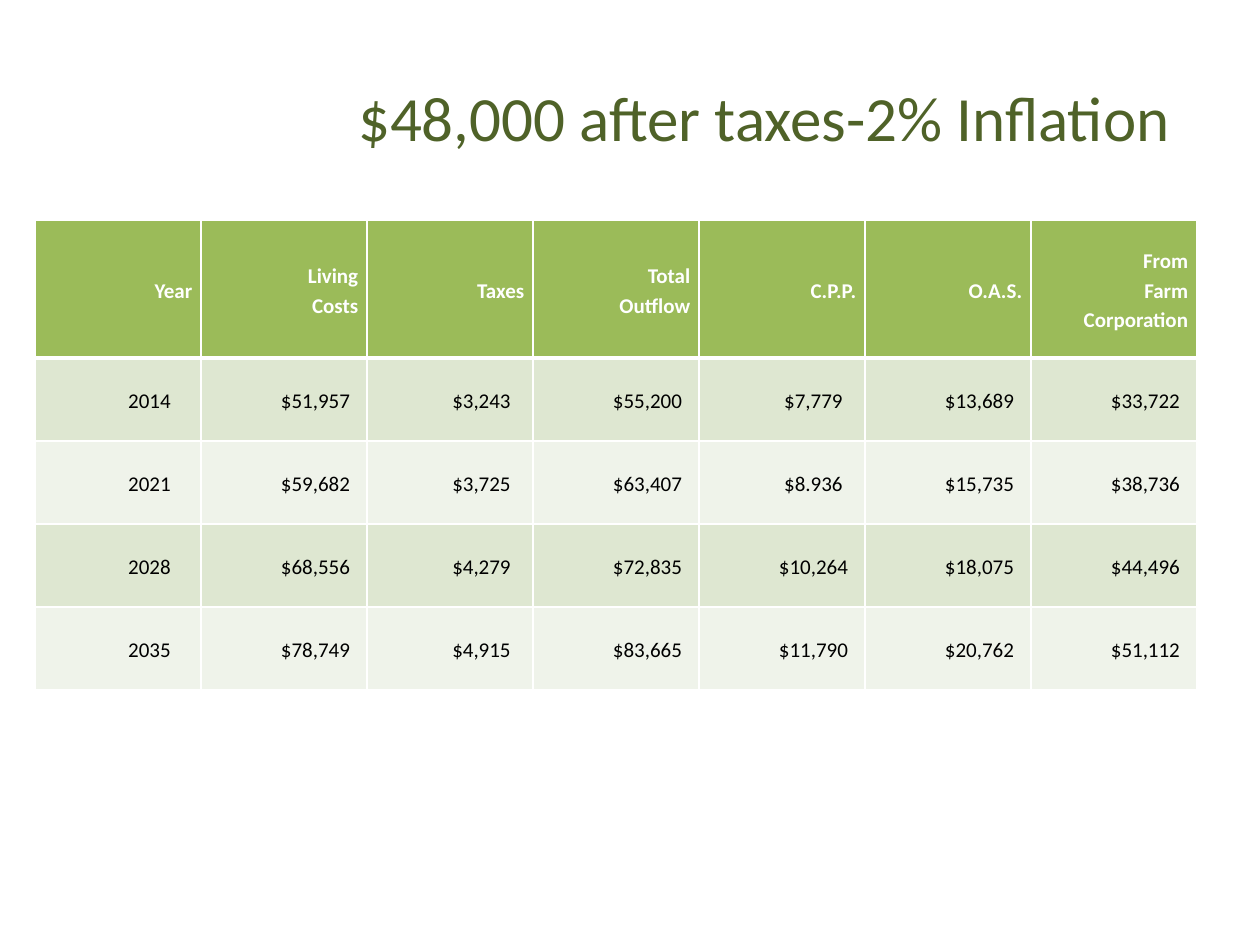
from dataclasses import dataclass

from lxml import etree
from pptx import Presentation
from pptx.dml.color import RGBColor
from pptx.enum.text import MSO_ANCHOR, MSO_AUTO_SIZE, PP_ALIGN
from pptx.oxml.ns import qn
from pptx.util import Pt

MIDDLE = MSO_ANCHOR.MIDDLE
NO_AUTOFIT = MSO_AUTO_SIZE.NONE
RIGHT, CENTER = PP_ALIGN.RIGHT, PP_ALIGN.CENTER
TITLE_ONLY = 5


@dataclass(frozen=True)
class Theme:
    font: str = "Calibri"
    title_size: float = 36
    table_size: float = 12
    title: str = "4F6228"
    header_fill: str = "9BBB59"
    header_text: str = "FFFFFF"
    body_text: str = "000000"
    bands: tuple = ("DEE7D1", "EFF3EA")
    rule: str = "FFFFFF"
    thin: float = 1
    thick: float = 3


THEME = Theme()

HEADINGS = ["Year", "Living Costs", "Taxes", "Total Outflow", "C.P.P.", "O.A.S.",
            "From Farm Corporation"]
PROJECTIONS = [
    ["2014", "$51,957", "$3,243", "$55,200", "$7,779", "$13,689", "$33,722"],
    ["2021", "$59,682", "$3,725", "$63,407", "$8.936", "$15,735", "$38,736"],
    ["2028", "$68,556", "$4,279", "$72,835", "$10,264", "$18,075", "$44,496"],
    ["2035", "$78,749", "$4,915", "$83,665", "$11,790", "$20,762", "$51,112"],
]


def add_text(paragraph, text, size, color, bold=False):
    run = paragraph.add_run()
    run.text = text
    run.font.name = THEME.font
    run.font.size = Pt(size)
    run.font.bold = bold
    run.font.color.rgb = RGBColor.from_string(color)


def place_title(slide, text, left, top, width, height):
    title = slide.shapes.title
    title.left, title.top = Pt(left), Pt(top)
    title.width, title.height = Pt(width), Pt(height)
    frame = title.text_frame
    frame.word_wrap = True
    frame.auto_size = NO_AUTOFIT
    frame.vertical_anchor = MIDDLE
    heading = frame.paragraphs[0]
    heading.alignment = RIGHT
    add_text(heading, text, THEME.title_size, THEME.title)


def rule_cell(cell, top, bottom):
    properties = cell._tc.get_or_add_tcPr()
    edges = {"a:lnL": THEME.thin, "a:lnR": THEME.thin, "a:lnT": top, "a:lnB": bottom}
    for edge, weight in edges.items():
        line = etree.SubElement(properties, qn(edge), w=str(Pt(weight)))
        fill = etree.SubElement(line, qn("a:solidFill"))
        etree.SubElement(fill, qn("a:srgbClr"), val=THEME.rule)


def fill_cell(cell, text, row):
    is_header = row == 0
    rule_cell(cell,
              top=THEME.thick if row == 1 else THEME.thin,
              bottom=THEME.thick if is_header else THEME.thin)
    cell.fill.solid()
    color = THEME.header_fill if is_header else THEME.bands[(row - 1) % 2]
    cell.fill.fore_color.rgb = RGBColor.from_string(color)
    cell.vertical_anchor = MIDDLE
    cell.margin_left = cell.margin_right = Pt(5)
    cell.margin_top = cell.margin_bottom = Pt(0)
    entry = cell.text_frame.paragraphs[0]
    entry.alignment = RIGHT if is_header else CENTER
    entry.line_spacing = 1.15
    indent = entry._p.get_or_add_pPr()
    indent.set("marL", "0")
    indent.set("indent", str(Pt(36)))
    add_text(entry, text, THEME.table_size,
             THEME.header_text if is_header else THEME.body_text, is_header)


def place_projections(slide, left, top, width, height, header_height):
    rows = [HEADINGS, *PROJECTIONS]
    table = slide.shapes.add_table(len(rows), len(HEADINGS), Pt(left), Pt(top),
                                   Pt(width), Pt(height)).table
    body_height = (height - header_height) / len(PROJECTIONS)
    for column in table.columns:
        column.width = Pt(width / len(HEADINGS))
    for row, entries in enumerate(rows):
        table.rows[row].height = Pt(body_height if row else header_height)
        for column, text in enumerate(entries):
            fill_cell(table.cell(row, column), text, row)


def main():
    deck = Presentation()
    deck.slide_width, deck.slide_height = Pt(720), Pt(540)
    slide = deck.slides.add_slide(deck.slide_layouts[TITLE_ONLY])
    place_title(slide, "$48,000 after taxes-2% Inflation ", 36, 21.6, 648, 90)
    place_projections(slide, 20, 126, 664, 268.2, header_height=78.6)
    deck.save("out.pptx")


if __name__ == "__main__":
    main()
